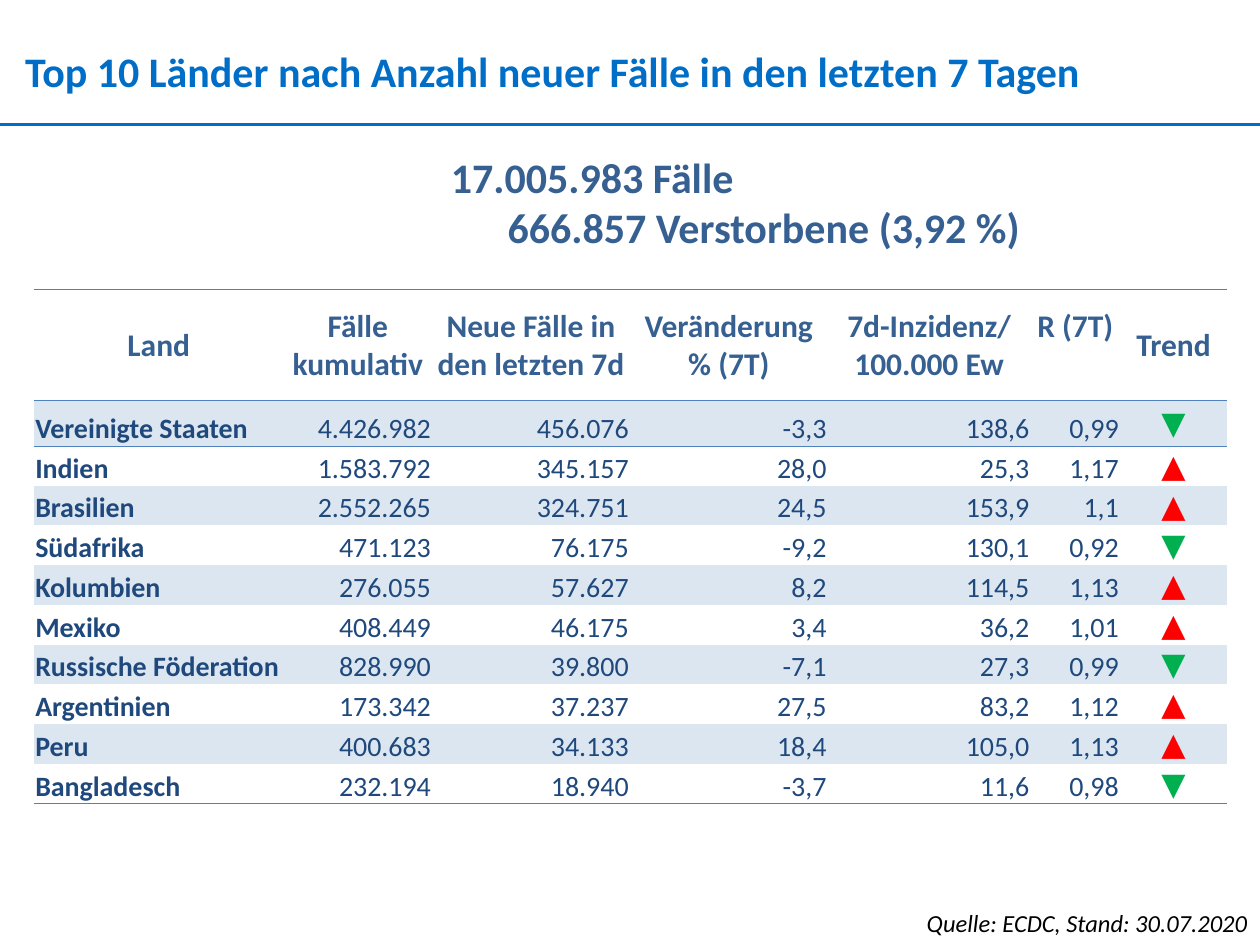
from dataclasses import dataclass
from lxml.etree import SubElement
from pptx import Presentation
from pptx.dml.color import RGBColor as Rgb
from pptx.enum.shapes import MSO_CONNECTOR as Link
from pptx.enum.text import MSO_ANCHOR as Anchor, MSO_AUTO_SIZE as Fit, PP_ALIGN as Align
from pptx.oxml.ns import qn
from pptx.util import Inches, Pt

BLUE = Rgb(0x00, 0x6E, 0xC7)
STEEL = Rgb(0x36, 0x60, 0x92)
NAVY = Rgb(0x1F, 0x49, 0x7D)
BAND = Rgb(0xDC, 0xE6, 0xF1)
EDGE = Rgb(0x4F, 0x81, 0xBD)
GREEN = Rgb(0x00, 0xB0, 0x50)
RED = Rgb(0xFF, 0x00, 0x00)
BLACK = Rgb(0, 0, 0)
UP, DOWN = "▲", "▼"
PLAIN = "{2D5ABB26-0587-4C30-8999-92F81FD0307C}"


@dataclass
class Style:
    size: int
    color: Rgb
    bold: bool = False
    italic: bool = False
    align: Align = Align.LEFT


@dataclass
class Note:
    box: tuple
    lines: list
    style: Style
    wrap: bool = True
    inset: tuple = (0.1, 0.05)
    indent: float = 0


@dataclass
class Land:
    name: str
    total: str
    fresh: str
    change: str
    rate: str
    r: str
    trend: str

    def cells(self) -> list:
        return [self.name, self.total, self.fresh, self.change,
                self.rate, self.r, self.trend]


HEAD = ["Land", "Fälle kumulativ", "Neue Fälle in den letzten 7d", "Veränderung % (7T)",
        "7d-Inzidenz/ 100.000 Ew", "R (7T)", "Trend"]
WIDTHS = [1.98, 1.18, 1.57, 1.57, 1.61, 0.71, 0.85]
LANDS = [
    Land("Vereinigte Staaten", "4.426.982", "456.076", "-3,3", "138,6", "0,99", DOWN),
    Land("Indien", "1.583.792", "345.157", "28,0", "25,3", "1,17", UP),
    Land("Brasilien", "2.552.265", "324.751", "24,5", "153,9", "1,1", UP),
    Land("Südafrika", "471.123", "76.175", "-9,2", "130,1", "0,92", DOWN),
    Land("Kolumbien", "276.055", "57.627", "8,2", "114,5", "1,13", UP),
    Land("Mexiko", "408.449", "46.175", "3,4", "36,2", "1,01", UP),
    Land("Russische Föderation", "828.990", "39.800", "-7,1", "27,3", "0,99", DOWN),
    Land("Argentinien", "173.342", "37.237", "27,5", "83,2", "1,12", UP),
    Land("Peru", "400.683", "34.133", "18,4", "105,0", "1,13", UP),
    Land("Bangladesch", "232.194", "18.940", "-3,7", "11,6", "0,98", DOWN),
]
TITLE = Style(24, BLUE, bold=True)
SUM = Style(24, STEEL, bold=True)
SOURCE = Style(14, BLACK, italic=True, align=Align.RIGHT)
TOP = Style(18, STEEL, bold=True, align=Align.CENTER)
NAME = Style(16, NAVY, bold=True)
VALUE = Style(16, NAVY, align=Align.RIGHT)
TREND = {UP: Style(18, RED, align=Align.CENTER),
         DOWN: Style(18, GREEN, align=Align.CENTER)}
NOTES = [
    Note((0.2, 0.36, 9.63, 0.4),
         ["Top 10 Länder nach Anzahl neuer Fälle in den letzten 7 Tagen"], TITLE, inset=(0, 0)),
    Note((3.48, 1.15, 4.76, 0.91),
         ["17.005.983 Fälle", "666.857 Verstorbene (3,92 %)"], SUM, wrap=False, indent=0.45),
    Note((6.46, 7.16, 3.54, 0.34), ["Quelle: ECDC, Stand: 30.07.2020"], SOURCE),
]


def format_text(frame, style: Style) -> None:
    for para in frame.paragraphs:
        para.alignment = style.align
        for run in para.runs:
            font = run.font
            font.name, font.size = "Calibri", Pt(style.size)
            font.bold, font.italic = style.bold, style.italic
            font.color.rgb = style.color


def add_note(slide, note: Note) -> None:
    frame = slide.shapes.add_textbox(*map(Inches, note.box)).text_frame
    frame.word_wrap = note.wrap
    frame.auto_size = Fit.SHAPE_TO_FIT_TEXT
    side, edge = map(Inches, note.inset)
    frame.margin_left = frame.margin_right = side
    frame.margin_top = frame.margin_bottom = edge
    frame.text = "\n".join(note.lines)
    for para in frame.paragraphs[1:]:
        para._p.get_or_add_pPr().set("marL", str(Inches(note.indent)))
    format_text(frame, note.style)


def add_edge(cell, side: str) -> None:
    line = SubElement(cell._tc.get_or_add_tcPr(), qn(f"a:ln{side}"), w=str(Pt(0.5)))
    fill = SubElement(line, qn("a:solidFill"))
    SubElement(fill, qn("a:srgbClr"), val=str(EDGE))


def fill_cell(cell, text: str, style: Style, anchor: Anchor, edges: str, band: bool) -> None:
    cell.text_frame.text = text
    format_text(cell.text_frame, style)
    cell.vertical_anchor = anchor
    cell.margin_left = cell.margin_right = cell.margin_top = Inches(0.01)
    cell.margin_bottom = Inches(0)
    for side in edges:
        add_edge(cell, side)
    if band:
        cell.fill.solid()
        cell.fill.fore_color.rgb = BAND
    else:
        cell.fill.background()


def add_lands(slide) -> None:
    frame = slide.shapes.add_table(len(LANDS) + 1, len(HEAD), Inches(0.27), Inches(2.3),
                                   Inches(9.47), Inches(4.03))
    table = frame.table
    table.horz_banding = table.first_row = False
    table._tbl.tblPr.find(qn("a:tableStyleId")).text = PLAIN
    for col, width in zip(table.columns, WIDTHS):
        col.width = Inches(width)
    for row, height in zip(table.rows, [0.88, 0.36] + [0.27] * (len(LANDS) - 1)):
        row.height = Inches(height)
    frame.height = Inches(4.03)
    for c, text in enumerate(HEAD):
        fill_cell(table.cell(0, c), text, TOP, Anchor.MIDDLE, "TB", False)
    table.cell(0, HEAD.index("R (7T)")).margin_bottom = Inches(0.3)
    for r, land in enumerate(LANDS, 1):
        edges = "T" if r == 1 else "B" if r == len(LANDS) else ""
        for c, text in enumerate(land.cells()):
            style = TREND.get(text, VALUE if c else NAME)
            anchor = Anchor.MIDDLE if text in TREND else Anchor.BOTTOM
            fill_cell(table.cell(r, c), text, style, anchor, edges, r % 2 == 1)


def add_rule(slide) -> None:
    rule = slide.shapes.add_connector(Link.STRAIGHT, Inches(0), Inches(0.99),
                                      Inches(10), Inches(0.99))
    rule.line.color.rgb = BLUE
    rule.line.width = Pt(1.5)
    SubElement(rule._element.spPr, qn("a:effectLst"))


def main() -> None:
    deck = Presentation()
    deck.slide_width, deck.slide_height = Inches(10), Inches(7.5)
    slide = deck.slides.add_slide(deck.slide_layouts[6])
    add_lands(slide)
    add_rule(slide)
    for note in NOTES:
        add_note(slide, note)
    deck.save("out.pptx")


if __name__ == "__main__":
    main()
